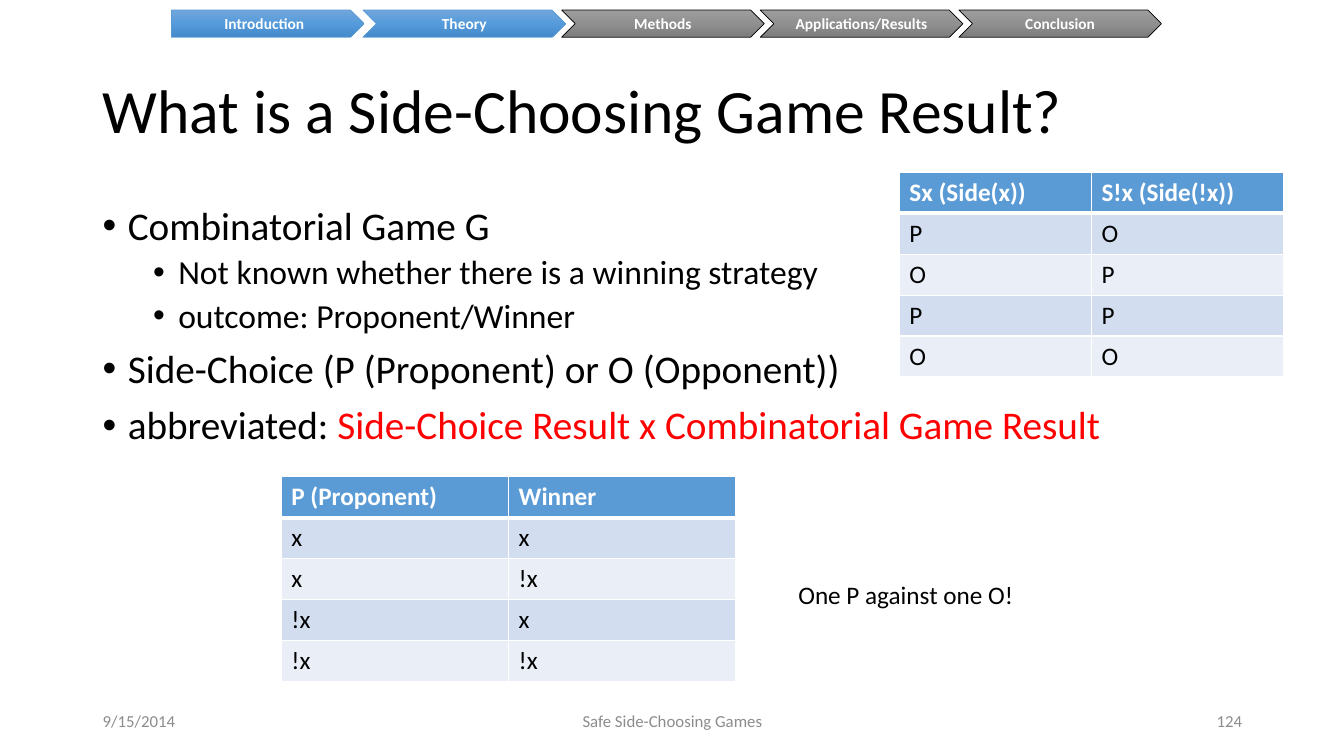
"""Build the slide on side-choosing game results."""
from copy import deepcopy
from dataclasses import dataclass

from pptx import Presentation
from pptx.dml.color import RGBColor
from pptx.enum.shapes import MSO_SHAPE as Shape
from pptx.enum.text import MSO_ANCHOR as Anchor, MSO_AUTO_SIZE as AutoSize, PP_ALIGN as Align
from pptx.oxml import parse_xml
from pptx.oxml.ns import nsdecls, qn
from pptx.util import Pt

PX = 9144
FONT = "Calibri"
BLACK = RGBColor(0x00, 0x00, 0x00)
WHITE = RGBColor(0xFF, 0xFF, 0xFF)
RED = RGBColor(0xFF, 0x00, 0x00)
GRAY = RGBColor(0x8C, 0x8C, 0x8C)
BLUE = RGBColor(0x5B, 0x9B, 0xD5)
BANDS = (RGBColor(0xEA, 0xEF, 0xF7), RGBColor(0xD2, 0xDE, 0xEF))
DONE_STOPS = (RGBColor(0x71, 0xA6, 0xDB), RGBColor(0x55, 0x9B, 0xDB), RGBColor(0x44, 0x8A, 0xCA))
TODO_STOPS = (RGBColor(0x9D, 0x9D, 0x9D), RGBColor(0x90, 0x90, 0x90), RGBColor(0x7C, 0x7C, 0x7C))


@dataclass(frozen=True)
class Box:
    left: int
    top: int
    width: int
    height: int

    def emu(self) -> tuple:
        return tuple(side * PX for side in (self.left, self.top, self.width, self.height))


@dataclass(frozen=True)
class Step:
    label: str
    done: bool


@dataclass(frozen=True)
class Grid:
    box: Box
    rows: tuple


@dataclass(frozen=True)
class Note:
    text: str
    box: Box
    size: int = 12
    color: RGBColor = GRAY
    align: Align = Align.LEFT
    anchor: Anchor = Anchor.MIDDLE
    wrap: bool = True
    fit: AutoSize = AutoSize.NONE


@dataclass(frozen=True)
class Bullet:
    text: str
    level: int = 0
    highlight: str = ""


STEPS = (
    Step("Introduction", True),
    Step("Theory", True),
    Step("Methods", False),
    Step("Applications/Results", False),
    Step("Conclusion", False),
)
BULLETS = (
    Bullet("Combinatorial Game G"),
    Bullet("Not known whether there is a winning strategy", 1),
    Bullet("outcome: Proponent/Winner", 1),
    Bullet("Side-Choice (P (Proponent) or O (Opponent))"),
    Bullet("abbreviated: ", highlight="Side-Choice Result x Combinatorial Game Result"),
)
GRIDS = (
    Grid(Box(279, 473, 451, 203),
         (("P (Proponent)", "Winner"), ("x", "x"), ("x", "!x"), ("!x", "x"), ("!x", "!x"))),
    Grid(Box(892, 171, 381, 203),
         (("Sx (Side(x))", "S!x (Side(!x))"), ("P", "O"), ("O", "P"), ("P", "P"), ("O", "O"))),
)
NOTES = (
    Note("One P against one O!", Box(782, 570, 236, 40), 18, BLACK,
         anchor=Anchor.TOP, wrap=False, fit=AutoSize.SHAPE_TO_FIT_TEXT),
    Note("9/15/2014", Box(92, 695, 300, 40)),
    Note("Safe Side-Choosing Games", Box(442, 695, 450, 40), align=Align.CENTER),
    Note("124", Box(942, 695, 300, 40), align=Align.RIGHT),
)


def apply(target, formats: dict) -> None:
    for name, value in formats.items():
        setattr(target, name, value)


def write(paragraph, text: str, size: int, color: RGBColor, bold: bool = False) -> None:
    run = paragraph.add_run()
    run.text = text
    apply(run.font, {"name": FONT, "size": Pt(size), "bold": bold})
    run.font.color.rgb = color


def place_title(title, text: str, box: Box) -> None:
    apply(title, dict(zip(("left", "top", "width", "height"), box.emu())))
    apply(title.text_frame, {"word_wrap": True, "auto_size": AutoSize.NONE,
                             "vertical_anchor": Anchor.MIDDLE})
    line = title.text_frame.paragraphs[0]
    apply(line, {"alignment": Align.LEFT, "line_spacing": 0.9})
    write(line, text, 44, BLACK)


def draw_bullets(shapes, box: Box) -> None:
    frame = shapes.add_textbox(*box.emu()).text_frame
    frame.word_wrap = True
    for index, bullet in enumerate(BULLETS):
        line = frame.add_paragraph() if index else frame.paragraphs[0]
        apply(line, {"level": bullet.level, "line_spacing": 0.9,
                     "space_before": Pt(5 if bullet.level else 10)})
        props = line._p.get_or_add_pPr()
        props.set("marL", str((25 + 50 * bullet.level) * PX))
        props.set("indent", str(-25 * PX))
        props.append(parse_xml(f'<a:buFont {nsdecls("a")} typeface="Arial"/>'))
        props.append(parse_xml(f'<a:buChar {nsdecls("a")} char="•"/>'))
        size = 28 - 4 * bullet.level
        write(line, bullet.text, size, BLACK)
        if bullet.highlight:
            write(line, bullet.highlight, size, RED)


def draw_borders(cell, row: int) -> None:
    widths = {"lnL": 1, "lnR": 1, "lnT": 3 if row == 1 else 1, "lnB": 3 if row == 0 else 1}
    for tag, width in widths.items():
        cell._tc.get_or_add_tcPr().append(parse_xml(
            f'<a:{tag} {nsdecls("a")} w="{Pt(width)}"><a:solidFill>'
            f'<a:srgbClr val="{WHITE}"/></a:solidFill></a:{tag}>'))


def draw_grid(shapes, grid: Grid) -> None:
    table = shapes.add_table(len(grid.rows), len(grid.rows[0]), *grid.box.emu()).table
    for row, values in enumerate(grid.rows):
        header = row == 0
        for column, value in enumerate(values):
            cell = table.cell(row, column)
            draw_borders(cell, row)
            cell.fill.solid()
            cell.fill.fore_color.rgb = BLUE if header else BANDS[row % 2]
            write(cell.text_frame.paragraphs[0], value, 18, WHITE if header else BLACK, header)


def draw_step(shapes, step: Step, kind: Shape, box: Box) -> None:
    arrow = shapes.add_shape(kind, *box.emu())
    arrow.shadow.inherit = False
    arrow.fill.gradient()
    arrow.fill.gradient_angle = 270
    stop_list = arrow._element.spPr.find(".//" + qn("a:gsLst"))
    stop_list.insert(1, deepcopy(stop_list[0]))
    colors = DONE_STOPS if step.done else TODO_STOPS
    for stop, color, position in zip(arrow.fill.gradient_stops, colors, (0, 0.5, 1)):
        stop.color.rgb = color
        stop.position = position
    arrow.line.color.rgb = BLUE if step.done else BLACK
    arrow.line.width = Pt(0.5)
    apply(arrow.text_frame, {"margin_left": 0, "margin_right": 0, "margin_top": 0,
                             "margin_bottom": 0, "vertical_anchor": Anchor.MIDDLE})
    line = arrow.text_frame.paragraphs[0]
    line.alignment = Align.CENTER
    write(line, step.label, 11, WHITE, True)


def draw_progress(shapes) -> None:
    steps = shapes.add_group_shape().shapes
    draw_step(steps, STEPS[0], Shape.PENTAGON, Box(170, 10, 191, 27))
    for index, step in enumerate(STEPS[1:]):
        draw_step(steps, step, Shape.CHEVRON, Box(360 + 197 * index, 10, 201, 27))


def draw_note(shapes, note: Note) -> None:
    frame = shapes.add_textbox(*note.box.emu()).text_frame
    apply(frame, {"word_wrap": note.wrap, "auto_size": note.fit, "vertical_anchor": note.anchor})
    line = frame.paragraphs[0]
    line.alignment = note.align
    write(line, note.text, note.size, note.color)


def main() -> None:
    deck = Presentation()
    apply(deck, {"slide_width": 1333 * PX, "slide_height": 750 * PX})
    shapes = deck.slides.add_slide(deck.slide_layouts[5]).shapes
    place_title(shapes.title, "What is a Side-Choosing Game Result?", Box(92, 40, 1150, 145))
    draw_bullets(shapes, Box(92, 200, 1150, 476))
    for grid in GRIDS:
        draw_grid(shapes, grid)
    draw_progress(shapes)
    for note in NOTES:
        draw_note(shapes, note)
    deck.save("out.pptx")


if __name__ == "__main__":
    main()
